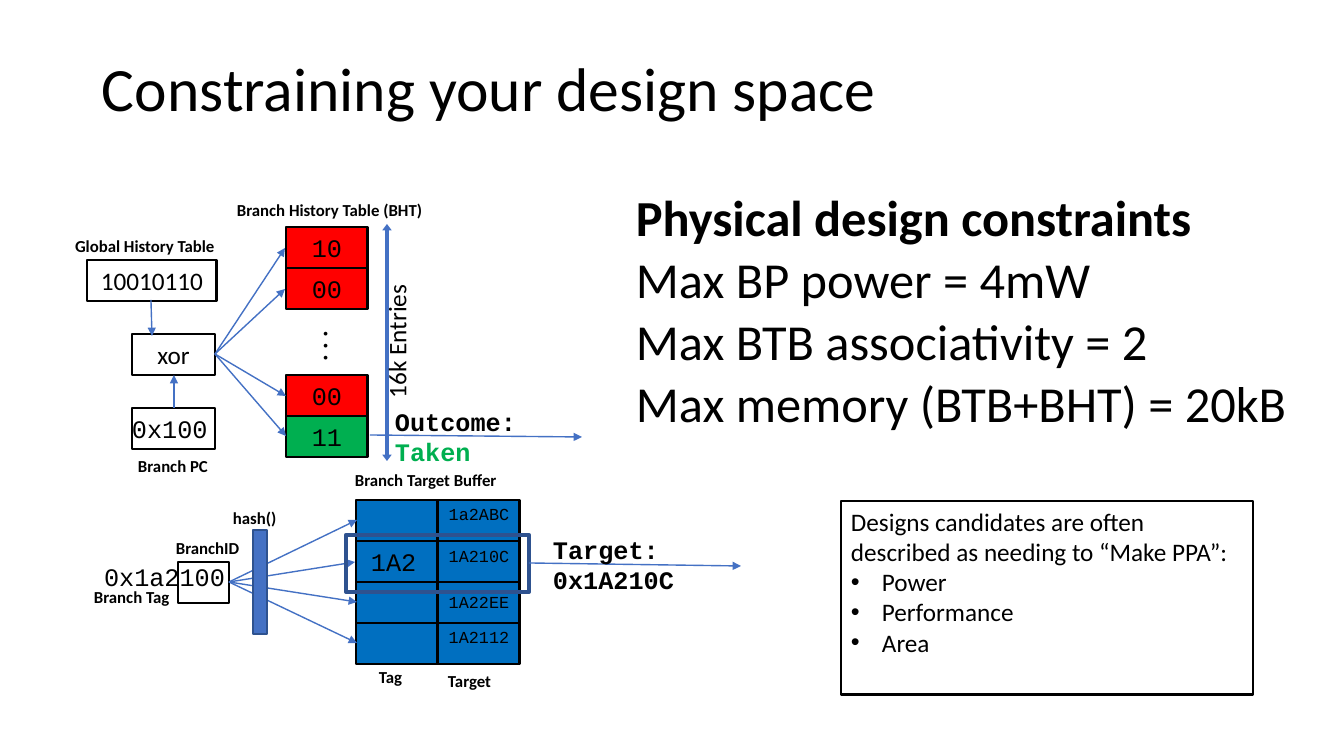
from lxml import etree
from pptx import Presentation
from pptx.dml.color import RGBColor
from pptx.enum.shapes import MSO_CONNECTOR, MSO_SHAPE
from pptx.enum.text import MSO_ANCHOR, PP_ALIGN
from pptx.oxml.ns import qn
from pptx.util import Emu, Pt

PX = 914400 / 100.8
BLACK = RGBColor(0x00, 0x00, 0x00)
RED = RGBColor(0xFF, 0x00, 0x00)
GREEN = RGBColor(0x00, 0xAF, 0x50)
BLUE = RGBColor(0x00, 0x6F, 0xC0)
ARROW_BLUE = RGBColor(0x44, 0x71, 0xC4)
EDGE_BLUE = RGBColor(0x2E, 0x52, 0x8F)
SANS, MONO = "Calibri", "Courier New"
STRAIGHT, RECTANGLE = MSO_CONNECTOR.STRAIGHT, MSO_SHAPE.RECTANGLE
TOP, MIDDLE = MSO_ANCHOR.TOP, MSO_ANCHOR.MIDDLE
LEFT, CENTER = PP_ALIGN.LEFT, PP_ALIGN.CENTER

TITLE = "Constraining your design space"
CONSTRAINTS = ["Physical design constraints", "Max BP power = 4mW",
               "Max BTB associativity = 2", "Max memory (BTB+BHT) = 20kB"]
NOTE = "Designs candidates are often described as needing to “Make PPA”:"
NOTE_BULLETS = ["Power", "Performance", "Area"]

# text, left, top, width
LABELS = [
    ("Branch History Table (BHT)", 237, 200, 194),
    ("Global History Table", 75, 236, 148),
    ("Branch PC", 138, 456, 78),
    ("Branch Target Buffer", 355, 470, 150),
    ("hash()", 233, 508, 50),
    ("BranchID", 176, 538, 70),
    ("Branch Tag", 94, 587, 82),
    ("Tag", 379, 667, 32),
    ("Target", 448, 671, 50),
]
# lines, colours, left, top
RESULTS = [
    (["Outcome:", "Taken"], [BLACK, GREEN], 395, 406),
    (["Target:", "0x1A210C"], [BLACK, BLACK], 553, 534),
]
# text, font, left, top, width, alignment
INPUT_BOXES = [
    ("10010110", SANS, 87, 260, 130, CENTER),
    ("xor", SANS, 132, 334, 83, CENTER),
    ("0x100", MONO, 132, 408, 83, LEFT),
    ("", MONO, 178, 562, 51, LEFT),
]
CELL_WIDTH, CELL_HEIGHT = 82, 41
HISTORY_LEFT = 286
HISTORY_BLOCKS = [(227, [("10", RED), ("00", RED)]),
                  (375, [("00", RED), ("11", GREEN)])]
BUFFER_LEFT, BUFFER_TOP = 356, 500
# tag, target, space above the target
BUFFER_ROWS = [("", "1a2ABC", 4), ("1A2", "1A210C", 5),
               ("", "1A22EE", 10), ("", "1A2112", 4)]
# start, list of ends
FANS = [
    ((215, 354), [(285, 248), (285, 289), (286, 396), (286, 436)]),
    ((229, 582), [(357, 520), (355, 562), (357, 602), (357, 643)]),
    ((151, 300), [(152, 336)]),
    ((174, 408), [(174, 375)]),
    ((370, 435), [(582, 437)]),
]
TARGET_ARROW = ((529, 563), (741, 566))


def px(length):
    return Emu(round(length * PX))


def write(frame, lines, size=18, font=SANS, bold=False, colors=(BLACK,),
          align=LEFT, anchor=TOP, margins=(0, 0, 0, 0), before=0, spacing=None):
    """Fill a text frame, one paragraph per line; colours repeat in turn."""
    frame.word_wrap = True
    frame.vertical_anchor = anchor
    (frame.margin_left, frame.margin_top,
     frame.margin_right, frame.margin_bottom) = map(px, margins)
    for index, line in enumerate(lines):
        para = frame.add_paragraph() if index else frame.paragraphs[0]
        para.alignment = align
        para.space_before = Pt(before)
        if spacing:
            para.line_spacing = Pt(spacing)
        span = para.add_run()
        span.text = line
        span.font.size = Pt(size)
        span.font.name = font
        span.font.bold = bold
        span.font.color.rgb = colors[index % len(colors)]


def add_text(slide, lines, left, top, width, height, vertical=False, **style):
    box = slide.shapes.add_textbox(px(left), px(top), px(width), px(height))
    write(box.text_frame, lines, **style)
    if vertical:
        box.text_frame._txBody.bodyPr.set("vert", "vert270")
    return box


def add_box(slide, left, top, width, height, text="", fill=None,
            line=BLACK, weight=2.04, **style):
    box = slide.shapes.add_shape(RECTANGLE, px(left), px(top), px(width), px(height))
    box.shadow.inherit = False
    if fill is None:
        box.fill.background()
    else:
        box.fill.solid()
        box.fill.fore_color.rgb = fill
    box.line.color.rgb = line
    box.line.width = Pt(weight)
    if text:
        write(box.text_frame, [text], **style)
    return box


def add_arrow(slide, start, end, weight=1, both=False):
    arrow = slide.shapes.add_connector(STRAIGHT, *map(px, start + end))
    arrow.line.color.rgb = ARROW_BLUE
    arrow.line.width = Pt(weight)
    outline = arrow.line._get_or_add_ln()
    for tag in ["a:headEnd", "a:tailEnd"] if both else ["a:tailEnd"]:
        tip = etree.SubElement(outline, qn(tag), type="triangle")
        if both:
            tip.set("len", "sm")
    etree.SubElement(arrow._element.spPr, qn("a:effectLst"))


def draw_predictor(slide):
    for text, font, left, top, width, align in INPUT_BOXES:
        add_box(slide, left, top, width, CELL_HEIGHT, text,
                font=font, align=align, anchor=MIDDLE)
    for top, cells in HISTORY_BLOCKS:
        for row, (bits, color) in enumerate(cells):
            add_box(slide, HISTORY_LEFT, top + row * CELL_HEIGHT, CELL_WIDTH, CELL_HEIGHT,
                    bits, fill=color, font=MONO, align=CENTER, anchor=MIDDLE)
    for row, (tag, target, gap) in enumerate(BUFFER_ROWS):
        top = BUFFER_TOP + row * CELL_HEIGHT
        add_box(slide, BUFFER_LEFT, top, CELL_WIDTH, CELL_HEIGHT, tag, fill=BLUE,
                font=MONO, anchor=MIDDLE, margins=(15, 0, 0, 0))
        add_box(slide, BUFFER_LEFT + CELL_WIDTH, top, CELL_WIDTH, CELL_HEIGHT, target,
                fill=BLUE, size=12, font=MONO, align=CENTER, margins=(0, gap, 0, 0))
    for start, ends in FANS:
        for end in ends:
            add_arrow(slide, start, end)
    add_arrow(slide, (387, 224), (387, 461), weight=2.25, both=True)
    add_box(slide, 253, 530, 14, 104, fill=ARROW_BLUE, line=EDGE_BLUE, weight=0.96)
    add_box(slide, 346, 535, 183, 57, line=EDGE_BLUE, weight=3)
    add_arrow(slide, *TARGET_ARROW)


def draw_labels(slide):
    for text, left, top, width in LABELS:
        add_text(slide, [text], left, top, width, 22, size=12, bold=True)
    for lines, colors, left, top in RESULTS:
        add_text(slide, lines, left, top, 130, 62, font=MONO, bold=True, colors=colors)
    add_text(slide, ["0x1a2100"], 104, 561, 126, 32, font=MONO)
    add_text(slide, ["16k Entries"], 386, 279, 28, 119, vertical=True, spacing=18.1)
    add_text(slide, [". . ."], 307, 322, 28, 40, vertical=True, spacing=18.1, bold=True)


def draw_note(slide):
    note = add_box(slide, 841, 501, 412, 194, weight=2)
    write(note.text_frame, [NOTE] + NOTE_BULLETS, margins=(10, 5, 10, 5))
    for para in note.text_frame.paragraphs[1:]:
        properties = para._p.get_or_add_pPr()
        properties.set("marL", str(px(31)))
        properties.set("indent", str(-px(31)))
        etree.SubElement(properties, qn("a:buFont"), typeface="Arial")
        etree.SubElement(properties, qn("a:buChar"), char="•")


def main():
    deck = Presentation()
    deck.slide_width, deck.slide_height = px(1344), px(756)
    slide = deck.slides.add_slide(deck.slide_layouts[6])
    add_text(slide, [TITLE], 102, 50, 1140, 80, size=44)
    draw_predictor(slide)
    draw_labels(slide)
    body = add_text(slide, CONSTRAINTS, 636, 186, 666, 248, size=36, before=1)
    body.text_frame.paragraphs[0].runs[0].font.bold = True
    draw_note(slide)
    deck.save("out.pptx")


if __name__ == "__main__":
    main()
